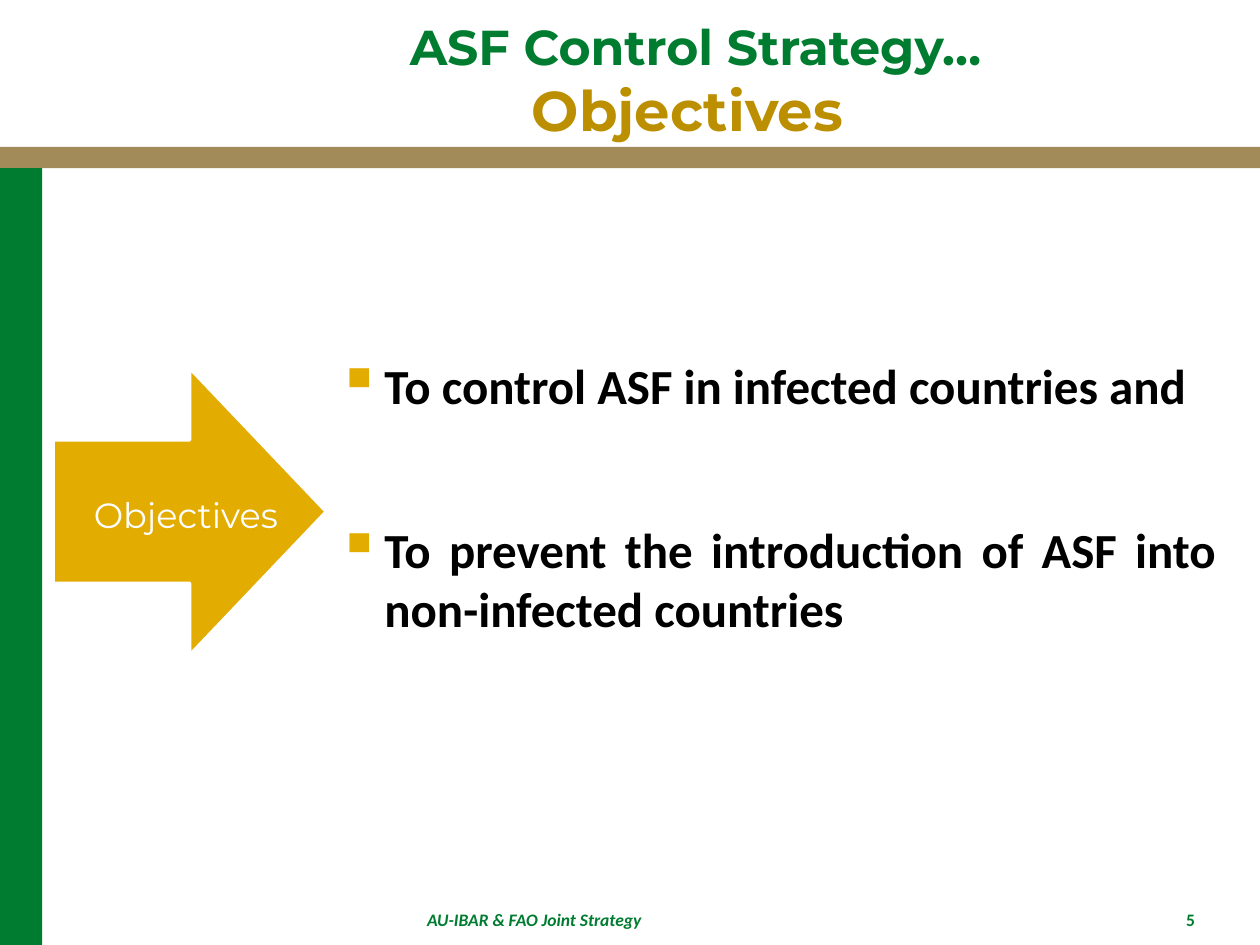
from lxml import etree
from pptx import Presentation
from pptx.dml.color import RGBColor
from pptx.enum.shapes import MSO_SHAPE
from pptx.enum.text import MSO_ANCHOR, MSO_AUTO_SIZE, PP_ALIGN
from pptx.oxml.ns import qn
from pptx.util import Cm, Pt

RECTANGLE, ARROW = MSO_SHAPE.RECTANGLE, MSO_SHAPE.RIGHT_ARROW
TOP, MIDDLE = MSO_ANCHOR.TOP, MSO_ANCHOR.MIDDLE
CENTER, RIGHT, JUSTIFY = PP_ALIGN.CENTER, PP_ALIGN.RIGHT, PP_ALIGN.JUSTIFY
NO_FIT = MSO_AUTO_SIZE.NONE

GREEN, TAN, GOLD, DARK_GOLD = "007C30", "A28B59", "E2AC00", "BC8F00"
WHITE, BLACK = "FFFFFF", "000000"
HEADING, BODY = "Montserrat", "Calibri"


def color(value):
    return RGBColor.from_string(value)


class SlideBuilder:
    def __init__(self, slide):
        self.slide = slide

    def add_run(self, para, text, size, fill, font=BODY, bold=True, italic=False):
        span = para.add_run()
        span.text = text
        span.font.name = font
        span.font.size = Pt(size)
        span.font.bold = bold
        span.font.italic = italic
        span.font.color.rgb = color(fill)

    def set_frame(self, box, anchor=TOP):
        frame = box.text_frame
        frame.word_wrap = True
        frame.auto_size = NO_FIT
        frame.vertical_anchor = anchor
        return frame

    def shape(self, kind, left, top, width, height, fill, outline=None):
        shape = self.slide.shapes.add_shape(
            kind, Cm(left), Cm(top), Cm(width), Cm(height))
        shape.shadow.inherit = False
        shape.fill.solid()
        shape.fill.fore_color.rgb = color(fill)
        if outline:
            shape.line.color.rgb = color(outline)
            shape.line.width = Pt(2)
        else:
            shape.line.fill.background()

    def title(self, left, top, width, height, lines):
        box = self.slide.shapes.title
        box.left, box.top, box.width, box.height = map(Cm, (left, top, width, height))
        para = self.set_frame(box).paragraphs[0]
        para.alignment = CENTER
        for index, (text, size, fill) in enumerate(lines):
            if index:
                para.add_line_break()
            self.add_run(para, text, size, fill, HEADING)

    def text_box(self, left, top, width, height, anchor=TOP):
        box = self.slide.shapes.add_textbox(Cm(left), Cm(top), Cm(width), Cm(height))
        return self.set_frame(box, anchor)

    def label(self, area, text, size, fill, align, anchor=TOP, **style):
        para = self.text_box(*area, anchor).paragraphs[0]
        para.alignment = align
        self.add_run(para, text, size, fill, **style)

    def bullets(self, area, items, size, inset, gap):
        frame = self.text_box(*area)
        frame.margin_top = Cm(inset)
        for index, text in enumerate(items):
            para = frame.add_paragraph() if index else frame.paragraphs[0]
            para.alignment = JUSTIFY
            para.space_before = Pt(gap if index else 0)
            self.add_bullet(para)
            self.add_run(para, text, size, BLACK)

    def add_bullet(self, para):
        props = para._p.get_or_add_pPr()
        indent = Cm(0.95)
        props.set("marL", str(indent))
        props.set("indent", str(-indent))
        bullet_color = etree.SubElement(props, qn("a:buClr"))
        etree.SubElement(bullet_color, qn("a:srgbClr"), val=GOLD)
        etree.SubElement(props, qn("a:buSzPct"), val="120000")
        etree.SubElement(props, qn("a:buChar"), char="▪")


def main():
    deck = Presentation()
    deck.slide_width, deck.slide_height = Cm(25.4), Cm(19.05)
    page = SlideBuilder(deck.slides.add_slide(deck.slide_layouts[5]))

    # Frame bands
    page.shape(RECTANGLE, 0, 2.96, 25.4, 0.43, TAN)
    page.shape(RECTANGLE, 0, 3.39, 0.85, 15.66, GREEN)

    # Title
    page.title(3.12, 0.2, 21.8, 2.54, [
        ("ASF Control Strategy…", 28, GREEN),
        ("Objectives ", 32, DARK_GOLD),
    ])

    # Arrow and its label
    page.shape(ARROW, 1.07, 7.42, 5.51, 5.79, GOLD, WHITE)
    page.label((1.25, 8.92, 5, 2.9), "Objectives", 20, WHITE, CENTER, MIDDLE,
               font=HEADING, bold=False)

    # Objectives
    page.bullets((6.55, 5.28, 18.21, 10.16), [
        "To control ASF in infected countries and",
        "To prevent the introduction of ASF into non-infected countries",
    ], size=28, inset=1.88, gap=60.5)

    # Footer and page number
    page.label((1.7, 18.19, 18.14, 0.81), "AU-IBAR & FAO Joint Strategy",
               10, GREEN, CENTER, italic=True)
    page.label((20.07, 18.21, 4.27, 0.81), "5", 10, GREEN, RIGHT)

    deck.save("out.pptx")


if __name__ == "__main__":
    main()
